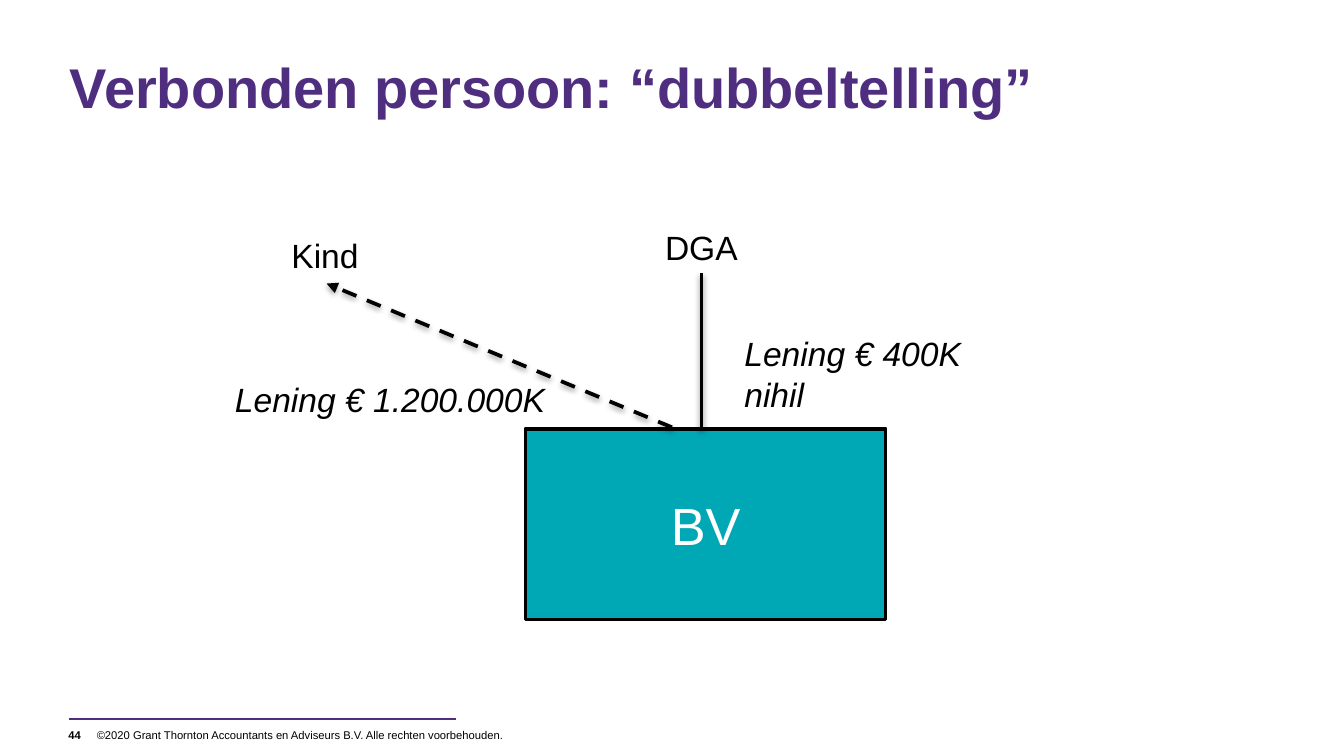
from dataclasses import dataclass

import pptx
import pptx.dml.color
import pptx.enum.dml
import pptx.enum.shapes
import pptx.enum.text
import pptx.oxml
import pptx.oxml.ns
import pptx.util
from pptx.util import Inches

RGB = pptx.dml.color.RGBColor
ANCHOR = pptx.enum.text.MSO_ANCHOR
ALIGN = pptx.enum.text.PP_ALIGN


@dataclass(frozen=True)
class Theme:
    font: str = "Arial"
    purple: RGB = RGB(0x4F, 0x2D, 0x7F)
    teal: RGB = RGB(0x00, 0xA7, 0xB5)
    black: RGB = RGB(0, 0, 0)
    white: RGB = RGB(255, 255, 255)
    title_size: float = 30
    company_size: float = 28
    label_size: float = 18
    footer_size: float = 6
    rule_width: float = 1.5
    line_width: float = 2


@dataclass(frozen=True)
class Label:
    text: str
    left: float
    top: float
    width: float
    height: float = 0.4
    size: float = Theme.label_size
    bold: bool = False
    italic: bool = False
    wrap: bool = False
    inset: tuple[float, float] = (0.1, 0.05)
    anchor: ANCHOR = ANCHOR.TOP


@dataclass(frozen=True)
class Link:
    start: tuple[float, float]
    end: tuple[float, float]
    color: RGB = Theme.black
    width: float = Theme.line_width
    dashed_arrow: bool = False
    shadow: bool = True


THEME = Theme()

LABELS = [
    Label("©2020 Grant Thornton Accountants en Adviseurs B.V. Alle rechten voorbehouden.",
          0.72, 5.37, 3.29, 0.2, size=THEME.footer_size, inset=(0, 0.05), anchor=ANCHOR.MIDDLE),
    Label("44", 0.51, 5.37, 0.2, 0.2, size=THEME.footer_size, bold=True,
          inset=(0, 0), anchor=ANCHOR.MIDDLE),
    Label("Lening € 400K nihil", 5.44, 2.43, 2.13, 0.7, italic=True, wrap=True),
    Label("DGA", 4.85, 1.64, 0.74),
    Label("Kind", 2.07, 1.7, 0.73),
    Label("Lening € 1.200.000K", 1.65, 2.77, 2.53, italic=True),
]

LINKS = [
    Link((0.51, 5.35), (3.39, 5.35), THEME.purple, THEME.rule_width, shadow=False),
    Link((5.22, 3.19), (5.22, 2.03)),
    Link((5, 3.18), (2.43, 2.11), dashed_arrow=True),
]


def style_text(frame, text: str, size: float, color: RGB,
               bold: bool = False, italic: bool = False) -> None:
    frame.text = text
    font = frame.paragraphs[0].runs[0].font
    font.name = THEME.font
    font.size = pptx.util.Pt(size)
    font.color.rgb = color
    font.bold = bold
    font.italic = italic


def set_insets(frame, horizontal: float, vertical: float) -> None:
    frame.margin_left = frame.margin_right = Inches(horizontal)
    frame.margin_top = frame.margin_bottom = Inches(vertical)


def place(shape, left: float, top: float, width: float, height: float) -> None:
    shape.left, shape.top = Inches(left), Inches(top)
    shape.width, shape.height = Inches(width), Inches(height)


def draw_title(slide, text: str) -> None:
    title = slide.shapes.title
    place(title, 0.52, 0.39, 8.97, 0.92)
    frame = title.text_frame
    set_insets(frame, 0, 0)
    frame.vertical_anchor = ANCHOR.TOP
    frame.auto_size = pptx.enum.text.MSO_AUTO_SIZE.NONE
    style_text(frame, text, THEME.title_size, THEME.purple, bold=True)
    frame.paragraphs[0].alignment = ALIGN.LEFT


def draw_label(slide, label: Label) -> None:
    frame = slide.shapes.add_textbox(
        Inches(label.left), Inches(label.top), Inches(label.width), Inches(label.height)
    ).text_frame
    frame.word_wrap = label.wrap
    frame.vertical_anchor = label.anchor
    set_insets(frame, *label.inset)
    style_text(frame, label.text, label.size, THEME.black, label.bold, label.italic)


def draw_company(slide, text: str) -> None:
    company = slide.shapes.add_shape(
        pptx.enum.shapes.MSO_SHAPE.RECTANGLE,
        Inches(3.91), Inches(3.19), Inches(2.68), Inches(1.42))
    company.shadow.inherit = False
    company.fill.solid()
    company.fill.fore_color.rgb = THEME.teal
    company.line.color.rgb = THEME.black
    company.line.width = pptx.util.Pt(THEME.line_width)
    company.text_frame.vertical_anchor = ANCHOR.MIDDLE
    style_text(company.text_frame, text, THEME.company_size, THEME.white)
    company.text_frame.paragraphs[0].alignment = ALIGN.CENTER


def draw_link(slide, link: Link) -> None:
    connector = slide.shapes.add_connector(
        pptx.enum.shapes.MSO_CONNECTOR.STRAIGHT,
        *map(Inches, link.start + link.end))
    connector.line.color.rgb = link.color
    connector.line.width = pptx.util.Pt(link.width)
    namespace = pptx.oxml.ns.nsdecls("a")
    properties = connector._element.spPr
    if link.dashed_arrow:
        connector.line.dash_style = pptx.enum.dml.MSO_LINE.DASH
        properties.find(pptx.oxml.ns.qn("a:ln")).append(
            pptx.oxml.parse_xml(f'<a:tailEnd {namespace} type="triangle"/>'))
    shadow = (
        f'<a:outerShdw blurRad="{pptx.util.Pt(3.1)}" dist="{pptx.util.Pt(1.6)}" '
        'dir="5400000" rotWithShape="0">'
        f'<a:srgbClr val="{THEME.black}"><a:alpha val="38000"/></a:srgbClr></a:outerShdw>'
    ) if link.shadow else ""
    properties.append(pptx.oxml.parse_xml(
        f"<a:effectLst {namespace}>{shadow}</a:effectLst>"))


def main() -> None:
    presentation = pptx.Presentation()
    presentation.slide_width = Inches(10)
    presentation.slide_height = presentation.slide_width * 9 // 16
    slide = presentation.slides.add_slide(presentation.slide_layouts[5])
    draw_title(slide, "Verbonden persoon: “dubbeltelling”")
    draw_company(slide, "BV")
    for label in LABELS:
        draw_label(slide, label)
    for link in LINKS:
        draw_link(slide, link)
    presentation.save("out.pptx")


if __name__ == "__main__":
    main()
